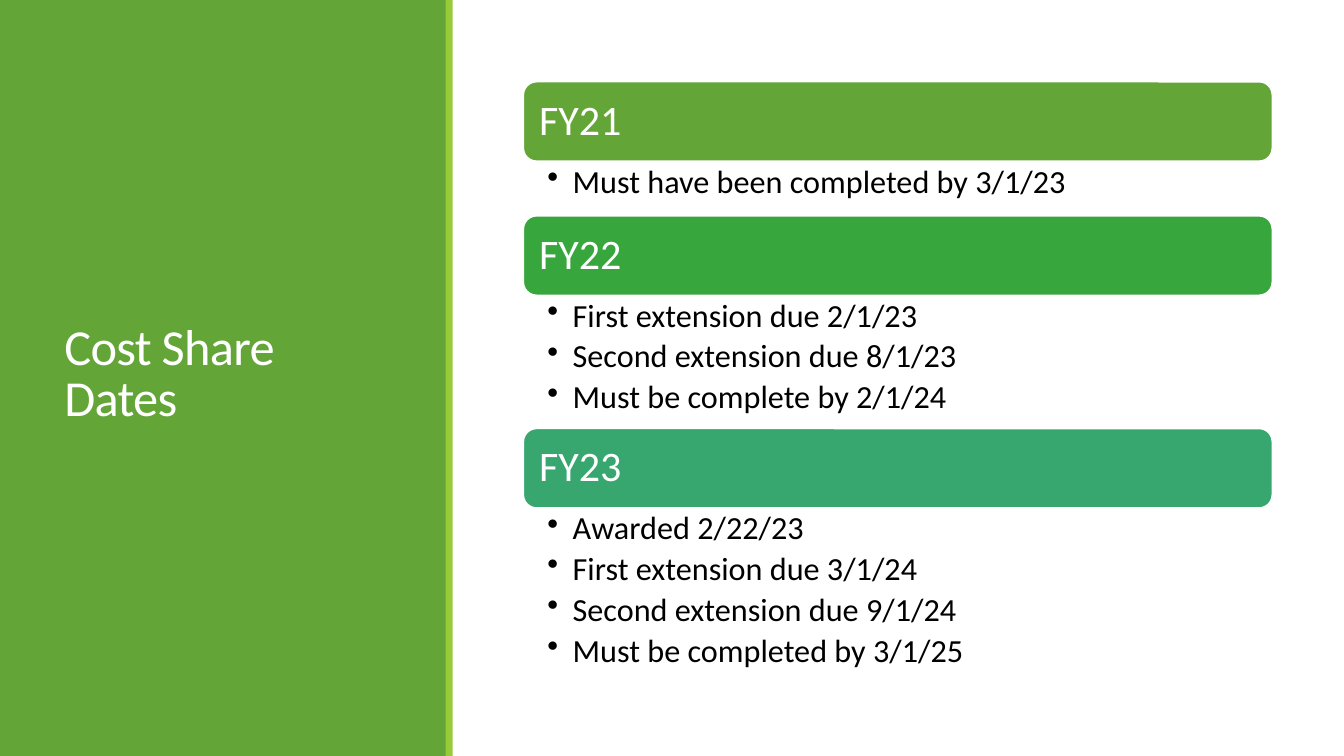
import lxml.etree
import pptx
import pptx.dml.color
import pptx.enum.shapes
import pptx.enum.text
import pptx.oxml.ns
import pptx.util

Inches = pptx.util.Inches
Pt = pptx.util.Pt
SHAPES = pptx.enum.shapes.MSO_SHAPE
ANCHOR = pptx.enum.text.MSO_ANCHOR

COLORS = {
    "panel": "63A537",
    "stripe": "99CB38",
    "FY21": "63A537",
    "FY22": "37A63D",
    "FY23": "37A76F",
    "white": "FFFFFF",
    "black": "000000",
}

YEARS = [
    ("FY21", 0.54, ["Must have been completed by 3/1/23"]),
    ("FY22", 1.32, ["First extension due 2/1/23", "Second extension due 8/1/23",
                    "Must be complete by 2/1/24"]),
    ("FY23", 1.73, ["Awarded 2/22/23", "First extension due 3/1/24",
                    "Second extension due 9/1/24", "Must be completed by 3/1/25"]),
]


def rgb(name):
    return pptx.dml.color.RGBColor.from_string(COLORS[name])


def write_text(frame, lines, size, color, font="Calibri", line_spacing=0.9, space_after=0,
               anchor=ANCHOR.TOP, margins=(0.1, 0.05, 0.1, 0.05), bullet=None, tracking=None):
    frame.word_wrap = True
    frame.vertical_anchor = anchor
    (frame.margin_left, frame.margin_top,
     frame.margin_right, frame.margin_bottom) = map(Inches, margins)
    for index, line in enumerate(lines):
        paragraph = frame.add_paragraph() if index else frame.paragraphs[0]
        paragraph.alignment = pptx.enum.text.PP_ALIGN.LEFT
        paragraph.line_spacing = line_spacing
        paragraph.space_after = Pt(space_after)
        run = paragraph.add_run()
        run.text = line
        run.font.name = font
        run.font.size = Pt(size)
        run.font.color.rgb = rgb(color)
        if tracking is not None:
            run.font._element.set("spc", str(round(tracking * 100)))
        if bullet:
            properties = paragraph._p.get_or_add_pPr()
            properties.set("marL", str(Inches(0.25)))
            properties.set("indent", str(Inches(-0.25)))
            tag = pptx.oxml.ns.qn("a:buChar")
            lxml.etree.SubElement(properties, tag).set("char", bullet)


class SlideBuilder:
    """Draws styled elements on the current slide."""

    def __init__(self, slide):
        self.slide = slide

    def block(self, left, top, width, height, fill, kind=SHAPES.RECTANGLE, line=None):
        shape = self.slide.shapes.add_shape(
            kind, Inches(left), Inches(top), Inches(width), Inches(height))
        shape.shadow.inherit = False
        shape.fill.solid()
        shape.fill.fore_color.rgb = rgb(fill)
        if line:
            shape.line.color.rgb = rgb(line)
            shape.line.width = Pt(1.25)
        else:
            shape.line.fill.background()
        return shape

    def text(self, left, top, width, height, lines, **text_format):
        box = self.slide.shapes.add_textbox(
            Inches(left), Inches(top), Inches(width), Inches(height))
        write_text(box.text_frame, lines, **text_format)

    def year(self, left, top, width, header_height, list_height, name, dates):
        header = self.block(left, top, width, header_height, name,
                            kind=SHAPES.ROUNDED_RECTANGLE, line="white")
        write_text(header.text_frame, [name], size=30, color="white",
                   anchor=ANCHOR.MIDDLE, margins=(0.12, 0.12, 0.12, 0.12))
        self.text(left, top + header_height, width, list_height, dates, size=23,
                  color="black", space_after=4.3, bullet="•",
                  margins=(0.24, 0.04, 0.23, 0.04))


def main():
    presentation = pptx.Presentation()
    presentation.slide_width = Inches(13.33)
    presentation.slide_height = Inches(7.5)
    builder = SlideBuilder(presentation.slides.add_slide(presentation.slide_layouts[6]))

    builder.block(0, 0, 4.43, 7.5, "panel")
    builder.text(0.54, 0.57, 3.37, 6.31, ["Cost Share Dates"], size=36, color="white",
                 line_spacing=0.85, anchor=ANCHOR.MIDDLE, tracking=-0.5)
    builder.block(4.42, 0, 0.07, 7.5, "stripe")

    header_height = 0.79
    top = 0.81
    for name, list_height, dates in YEARS:
        builder.year(5.19, top, 7.43, header_height, list_height, name, dates)
        top += header_height + list_height

    presentation.save("out.pptx")


if __name__ == "__main__":
    main()
